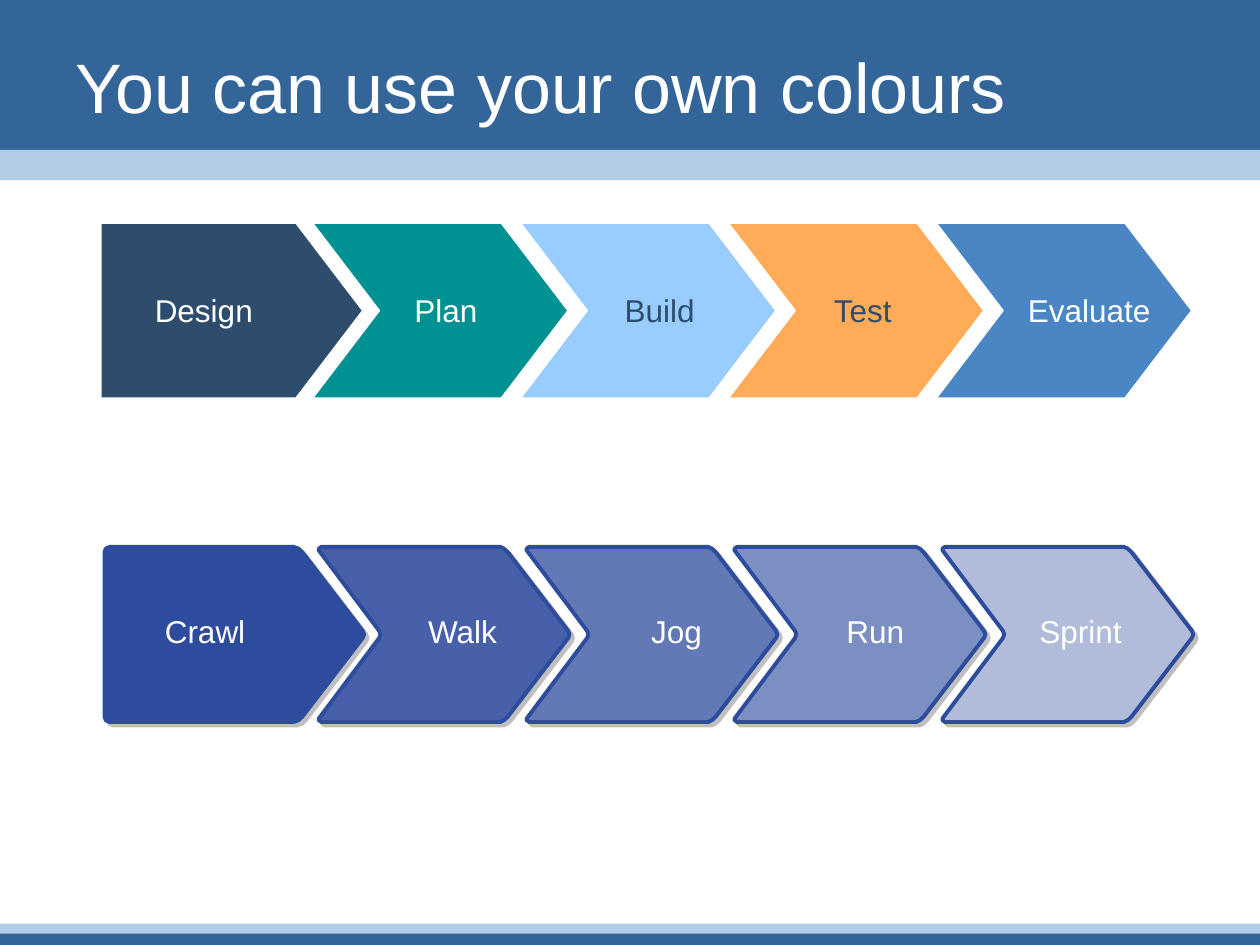
"""Build a slide with two rows of five process arrows in custom colours."""
from lxml import etree
from pptx import Presentation, util as u
from pptx.dml.color import RGBColor
from pptx.enum import shapes, text
from pptx.oxml import ns

NAVY, SLATE, WHITE, ROYAL = "336599", "2E4C6B", "FFFFFF", "2E4C9D"
MARGIN, COLUMN, HEIGHT = 0.83, 1.65, 1.39


def paint(shape, fill, line=None, width=1):
    shape.shadow.inherit = False
    shape.fill.solid()
    shape.fill.fore_color.rgb = RGBColor.from_string(fill)
    if line:
        shape.line.color.rgb = RGBColor.from_string(line)
        shape.line.width = u.Pt(width)
    else:
        shape.line.fill.background()


def write(words, box, size, colour, frame_format):
    frame = slide.shapes.add_textbox(*map(u.Inches, box)).text_frame
    for name, value in frame_format.items():
        setattr(frame, name, value)
    paragraph = frame.paragraphs[0]
    paragraph.text = words
    font = paragraph.runs[0].font
    for name, value in {"name": "Arial", "size": u.Pt(size)}.items():
        setattr(font, name, value)
    font.color.rgb = RGBColor.from_string(colour)


presentation = Presentation()
presentation.slide_width, presentation.slide_height = u.Inches(10), u.Inches(7.5)
slide = presentation.slides.add_slide(presentation.slide_layouts[6])

for top, height, colour in [(0, 1.31, NAVY), (7.37, 0.13, NAVY),
                            (1.19, 0.24, "B3CCE6"), (7.33, 0.08, "B3CCE6")]:
    band = slide.shapes.add_shape(shapes.MSO_SHAPE.RECTANGLE, 0, u.Inches(top),
                                  presentation.slide_width, u.Inches(height))
    paint(band, colour)

write("You can use your own colours", (0.5, 0.28, 9.07, 0.79), 40, WHITE,
      {"word_wrap": True, "vertical_anchor": text.MSO_ANCHOR.MIDDLE})

rows = [
    {
        "top": 1.77, "text_top": 2.26, "line": WHITE, "width": 1, "shadow": False,
        "first": [(-0.03, 0), (1.52, 0), (2.05, 0.5)],
        "next": [(0.53, 0.5), (0, 0), (1.5, 0), (2.03, 0.5)],
        "steps": [("Design", SLATE, WHITE, 0.3, 0.98),
                  ("Plan", "009193", WHITE, 0.71, 0.7),
                  ("Build", "99CCFF", SLATE, 0.73, 0.76),
                  ("Test", "FFAB57", SLATE, 0.74, 0.69),
                  ("Evaluate", "4986C3", WHITE, 0.63, 1.17)],
    },
    {
        "top": 4.34, "text_top": 4.81, "line": ROYAL, "width": 2.25, "shadow": True,
        "first": [(0, 0.03), (0.01, 0.01), (0.04, 0), (1.5, 0), (1.54, 0.01),
                  (1.57, 0.03), (2.05, 0.48), (2.06, 0.5)],
        "next": [(0.54, 0.5), (0.53, 0.48), (0.05, 0.02), (0.05, 0.01), (0.07, 0),
                 (1.49, 0), (1.52, 0.01), (1.55, 0.03), (2.03, 0.48), (2.04, 0.5)],
        "steps": [("Crawl", ROYAL, WHITE, 0.38, 0.84),
                  ("Walk", "4860A9", WHITE, 0.82, 0.76),
                  ("Jog", "6279B6", WHITE, 0.94, 0.6),
                  ("Run", "7C8FC2", WHITE, 0.84, 0.66),
                  ("Sprint", "B1BCDA", WHITE, 0.72, 0.85)],
    },
]

for row in rows:
    for index, (words, fill, colour, indent, text_width) in enumerate(row["steps"]):
        left = MARGIN + index * COLUMN
        upper = row["next"] if index else row["first"]
        lower = [(x, 1 - y) for x, y in reversed(upper) if y != 0.5]
        points = [(u.Inches(left + x), u.Inches(row["top"] + y * HEIGHT))
                  for x, y in upper + lower]
        builder = slide.shapes.build_freeform(*points[0])
        builder.add_line_segments(points[1:], close=True)
        arrow = builder.convert_to_shape()
        paint(arrow, fill, row["line"], row["width"])
        if row["shadow"]:
            effects = arrow.element.spPr.find(ns.qn("a:effectLst"))
            shadow = etree.SubElement(effects, ns.qn("a:outerShdw"), blurRad="0",
                                      dist=str(u.Pt(2.8)), dir="2700000",
                                      algn="ctr", rotWithShape="0")
            tint = etree.SubElement(shadow, ns.qn("a:srgbClr"), val="808080")
            etree.SubElement(tint, ns.qn("a:alpha"), val="50000")
        write(words, (left + indent, row["text_top"], text_width, 0.4), 18, colour,
              {"word_wrap": False, "auto_size": text.MSO_AUTO_SIZE.SHAPE_TO_FIT_TEXT})

presentation.save("out.pptx")
